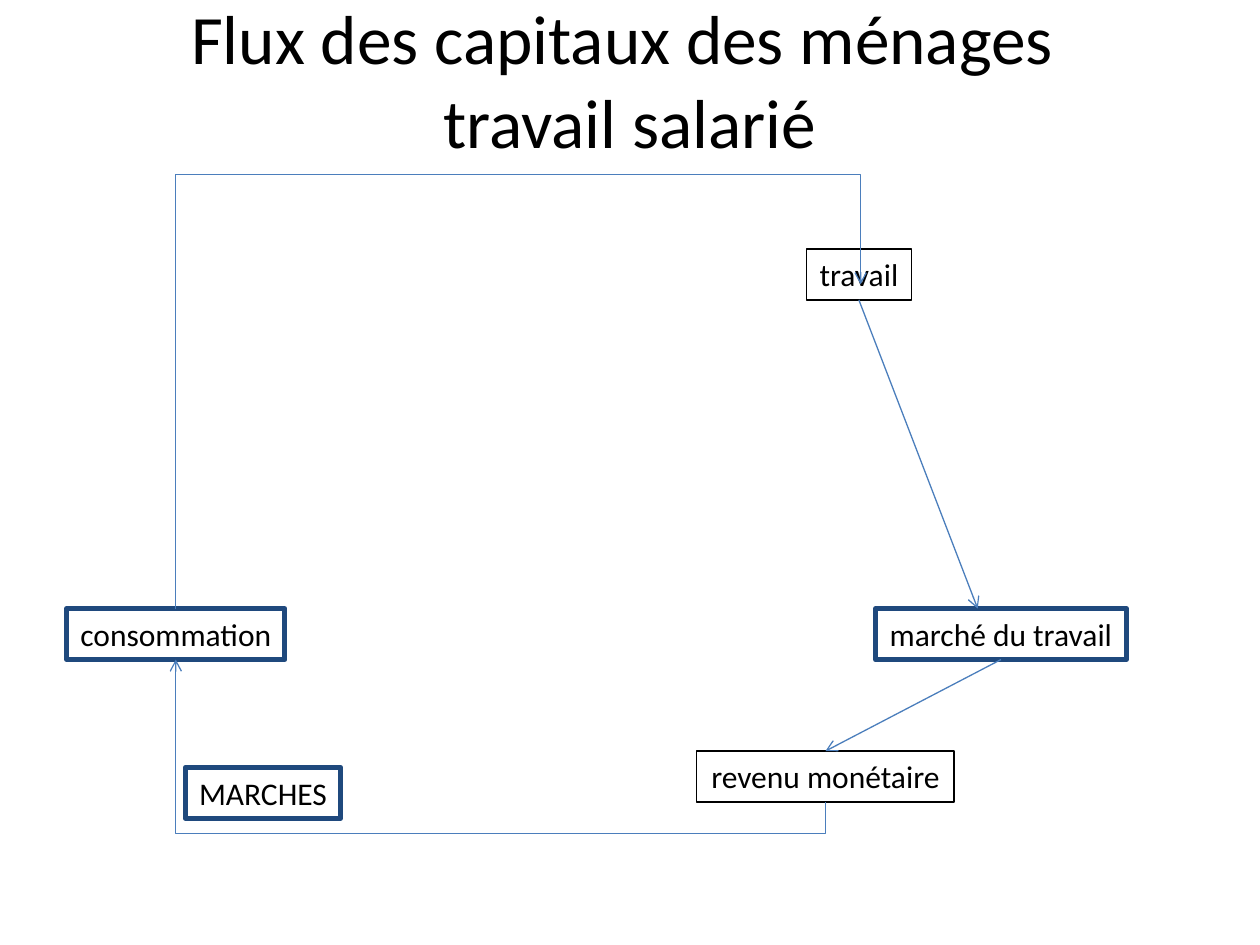
import pptx
import pptx.dml.color
import pptx.enum.shapes
import pptx.enum.text
import pptx.oxml
import pptx.oxml.ns
import pptx.util

Pt = pptx.util.Pt
CONNECTOR = pptx.enum.shapes.MSO_CONNECTOR
BOX_HEIGHT = 29.1


def color(value):
    return pptx.dml.color.RGBColor.from_string(value)


def style_text(paragraph, size):
    paragraph.alignment = pptx.enum.text.PP_ALIGN.CENTER
    paragraph.font.name = "Calibri"
    paragraph.font.size = Pt(size)
    paragraph.font.color.rgb = color("000000")


def add_title(slide, left, top, width, height, text):
    shape = slide.shapes.add_textbox(Pt(left), Pt(top), Pt(width), Pt(height))
    frame = shape.text_frame
    frame.word_wrap = True
    frame.vertical_anchor = pptx.enum.text.MSO_ANCHOR.MIDDLE
    frame.text = text
    style_text(frame.paragraphs[0], 39.6)


def add_box(slide, left, top, width, text, market=False):
    shape = slide.shapes.add_shape(
        pptx.enum.shapes.MSO_SHAPE.RECTANGLE,
        Pt(left), Pt(top), Pt(width), Pt(BOX_HEIGHT))
    shape.shadow.inherit = False
    if market:
        shape.fill.solid()
        shape.fill.fore_color.rgb = color("FFFFFF")
    else:
        shape.fill.background()
    shape.line.color.rgb = color("1F497D" if market else "000000")
    shape.line.width = Pt(3 if market else 0.75)
    frame = shape.text_frame
    frame.word_wrap = False
    frame.auto_size = pptx.enum.text.MSO_AUTO_SIZE.SHAPE_TO_FIT_TEXT
    frame.vertical_anchor = pptx.enum.text.MSO_ANCHOR.TOP
    frame.text = text
    style_text(frame.paragraphs[0], 18)
    middle = left + width / 2
    return (middle, top), (middle, top + BOX_HEIGHT)


def add_arrow(slide, start, end, kind=CONNECTOR.STRAIGHT):
    connector = slide.shapes.add_connector(
        kind, *(Pt(value) for value in (*start, *end)))
    connector.line.color.rgb = color("4B7EBC")
    connector.line.width = Pt(0.75)
    line = connector.line._get_or_add_ln()
    line.append(pptx.oxml.parse_xml(
        f'<a:tailEnd {pptx.oxml.ns.nsdecls("a")} type="arrow"/>'))
    connector._element.spPr.append(pptx.oxml.parse_xml(
        f'<a:effectLst {pptx.oxml.ns.nsdecls("a")}/>'))
    return connector


def add_bent_arrow(slide, start, end, turn_y):
    center_x = (start[0] + end[0]) / 2
    center_y = (start[1] + end[1]) / 2
    across = start[0] - center_x
    down = start[1] - center_y
    connector = add_arrow(
        slide, (center_x + down, center_y - across),
        (center_x - down, center_y + across), CONNECTOR.ELBOW)
    properties = connector._element.spPr
    properties.find(pptx.oxml.ns.qn("a:xfrm")).set("rot", "5400000")
    geometry = properties.find(pptx.oxml.ns.qn("a:prstGeom"))
    adjustment = round(100000 * (turn_y - start[1]) / (end[1] - start[1]))
    guides = geometry.get_or_add_avLst()
    guides.append(pptx.oxml.parse_xml(
        f'<a:gd {pptx.oxml.ns.nsdecls("a")} name="adj1" fmla="val {adjustment}"/>'))


def add_flow(slide, left, top):
    _, work_bottom = add_box(slide, left + 422.6, top + 42.5, 60, "travail")
    use_top, use_bottom = add_box(
        slide, left, top + 248, 124.6, "consommation", True)
    income_top, income_bottom = add_box(
        slide, left + 360, top + 329.4, 147, "revenu monétaire")
    market_top, market_bottom = add_box(
        slide, left + 462.2, top + 248, 143.2, "marché du travail", True)
    add_arrow(slide, work_bottom, (left + 520.5, market_top[1]))
    add_arrow(slide, market_bottom, income_top)
    add_box(slide, left + 67.8, top + 338.7, 88.6, "MARCHES", True)
    add_bent_arrow(slide, income_bottom, use_bottom, top + 376.6)
    add_bent_arrow(slide, use_top, (left + 453.6, top + 62.7), top)


def main():
    presentation = pptx.Presentation()
    presentation.slide_width = Pt(720)
    presentation.slide_height = Pt(540)
    slide = presentation.slides.add_slide(presentation.slide_layouts[6])
    add_flow(slide, 38.2, 99.8)
    add_title(slide, 36, 0, 648, 90,
              "Flux des capitaux des ménages \vtravail salarié")
    presentation.save("out.pptx")


if __name__ == "__main__":
    main()
